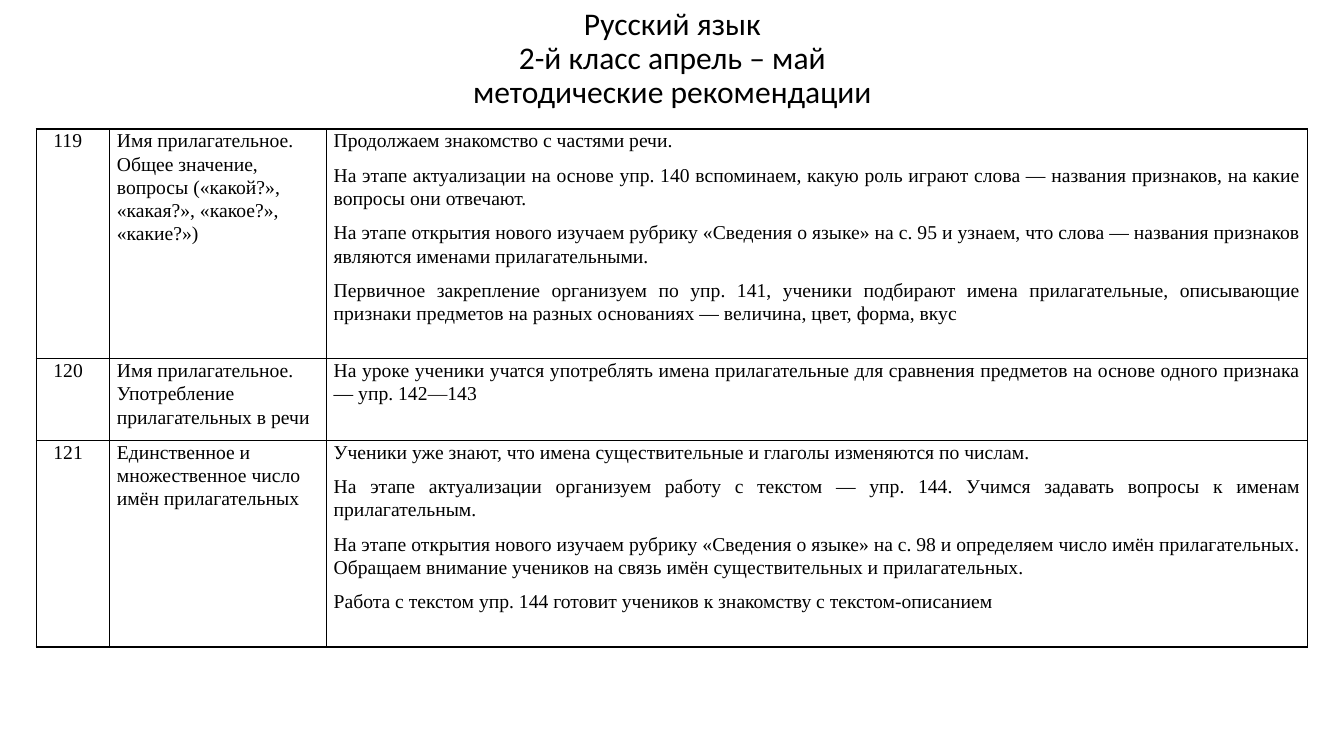
from lxml.etree import SubElement as Sub
from pptx import Presentation
from pptx.dml.color import RGBColor
from pptx.enum.text import MSO_ANCHOR as Anchor, PP_ALIGN as Align
from pptx.oxml.ns import qn
from pptx.util import Inches, Pt

BLACK = "000000"
SERIF = "Times New Roman"
TITLE = ["Русский язык", "2-й класс апрель – май", "методические рекомендации"]
COLS = [0.73, 2.15, 9.73]
ROWS = [2.28, 0.81, 2.05]

# Lesson number, topic, advice; a paragraph is a list of (text, colour) runs
LESSONS = [
    ("119",
     "Имя прилагательное. Общее значение, вопросы («какой?», «какая?», «какое?», «какие?»)",
     [[("Продолжаем знакомство с частями речи.", BLACK)],
      [("На этапе актуализации на основе упр. 140 вспоминаем, какую роль играют слова — "
        "названия признаков, на какие вопросы они отвечают.", BLACK)],
      [("На этапе открытия нового изучаем рубрику «Сведения о языке» на с. 95 и узнаем, "
        "что слова — названия признаков являются именами прилагательными.", BLACK)],
      [("Первичное закрепление организуем по упр. 141, ученики подбирают имена "
        "прилагательные, описывающие признаки предметов на разных основаниях — "
        "величина, цвет, форма, вкус", BLACK)]]),
    ("120",
     "Имя прилагательное. Употребление прилагательных в речи",
     [[("На уроке ученики учатся употреблять имена прилагательные для сравнения предметов "
        "на основе одного признака — упр. 142", BLACK), ("—", "221F1F"), ("143", BLACK)]]),
    ("121",
     "Единственное и множественное число имён прилагательных",
     [[("Ученики уже знают, что имена существительные и глаголы изменяются по числам.", BLACK)],
      [("На этапе актуализации организуем работу с текстом — упр. 144. Учимся задавать "
        "вопросы к именам прилагательным.", BLACK)],
      [("На этапе открытия нового изучаем рубрику «Сведения о языке» на с. 98 и определяем "
        "число имён прилагательных. Обращаем внимание учеников на связь имён "
        "существительных и прилагательных.", BLACK)],
      [("Работа с текстом упр. 144 готовит учеников к знакомству с текстом-описанием", BLACK)]]),
]


def color(code):
    return RGBColor.from_string(code)


def add_run(para, text, face, size, code=BLACK):
    run = para.add_run()
    run.text = text
    run.font.name = face
    run.font.size = Pt(size)
    run.font.color.rgb = color(code)


def add_title(slide, lines):
    box = slide.shapes.add_textbox(Inches(0.92), Inches(0.08), Inches(11.5), Inches(1.02))
    frame = box.text_frame
    frame.word_wrap = True
    frame.vertical_anchor = Anchor.MIDDLE
    para = frame.paragraphs[0]
    para.alignment = Align.CENTER
    para.line_spacing = 0.9
    for i, line in enumerate(lines):
        if i:
            para.add_line_break()
        add_run(para, line, "Calibri", 22.5)


def add_edges(cell):
    props = cell._tc.get_or_add_tcPr()
    for side in ("lnL", "lnR", "lnT", "lnB"):
        edge = Sub(props, qn("a:" + side), w=str(Pt(1)))
        fill = Sub(edge, qn("a:solidFill"))
        Sub(fill, qn("a:srgbClr"), val=BLACK)


def fill_cell(cell, paras, align=Align.LEFT, indent=0):
    cell.margin_left = cell.margin_right = Inches(0.07)
    cell.margin_top = cell.margin_bottom = 0
    add_edges(cell)
    cell.fill.background()
    frame = cell.text_frame
    for i, runs in enumerate(paras):
        para = frame.add_paragraph() if i else frame.paragraphs[0]
        para._p.get_or_add_pPr().set("marL", str(Inches(indent)))
        para.alignment = align
        para.line_spacing = 1.07
        para.space_after = Pt(8)
        for text, code in runs:
            add_run(para, text, SERIF, 14, code)


def add_plan(slide):
    frame = slide.shapes.add_table(len(ROWS), len(COLS), Inches(0.36), Inches(1.28),
                                   Inches(sum(COLS)), Inches(sum(ROWS)))
    table = frame.table
    table.first_row = table.horz_banding = False
    for col, width in zip(table.columns, COLS):
        col.width = Inches(width)
    for row, height, (number, topic, advice) in zip(table.rows, ROWS, LESSONS):
        row.height = Inches(height)
        first, middle, last = row.cells
        fill_cell(first, [[(number, BLACK)]], indent=0.1)
        fill_cell(middle, [[(topic, BLACK)]])
        fill_cell(last, advice, Align.JUSTIFY)


def main():
    deck = Presentation()
    deck.slide_width = Inches(13.33)
    deck.slide_height = Inches(7.5)
    slide = deck.slides.add_slide(deck.slide_layouts[6])
    # Heading
    add_title(slide, TITLE)
    # Lesson table
    add_plan(slide)
    deck.save("out.pptx")


if __name__ == "__main__":
    main()
